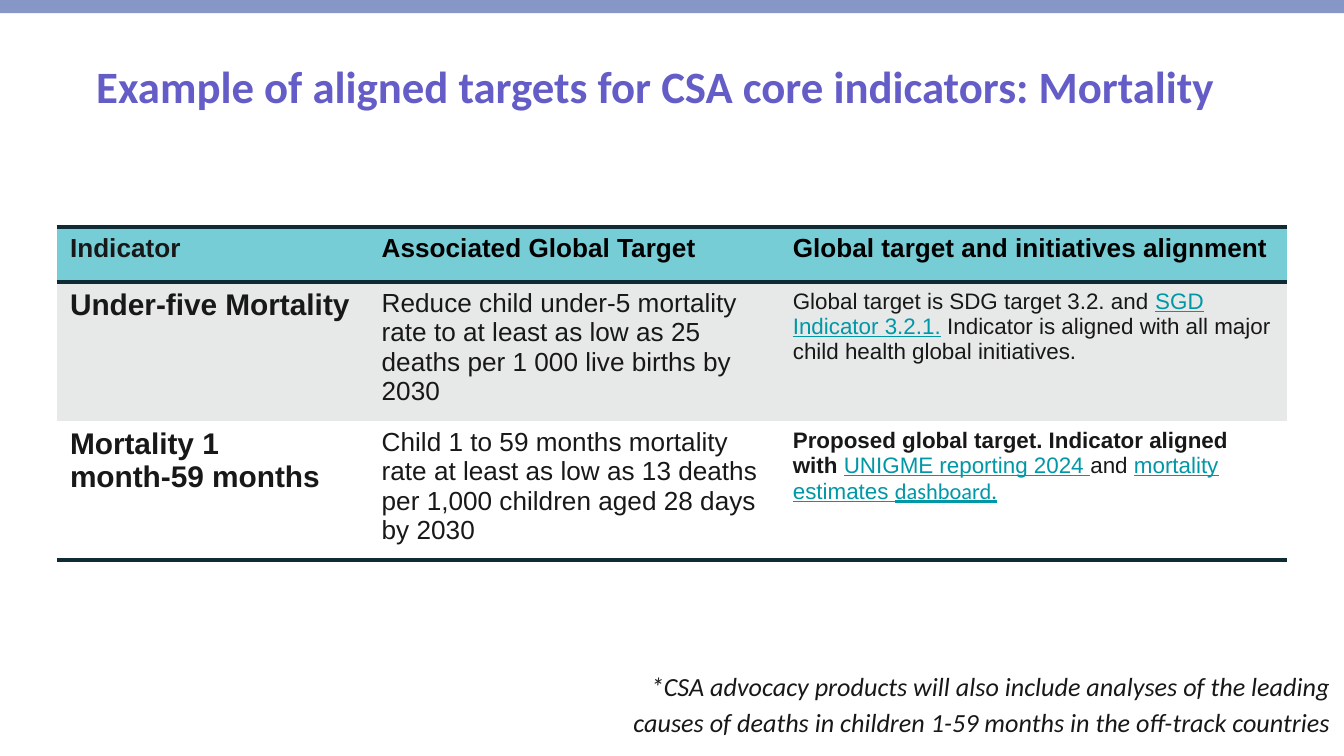
from lxml import etree
from pptx import Presentation, util as u
from pptx.dml import color
from pptx.enum import shapes, text
from pptx.oxml import ns

INK, BLACK, LINK, RULE = "181818", "000000", "0097A7", "0F2B36"
HEADER, GREY, WHITE = "76CDD6", "E7E8E8", "FFFFFF"


def rgb(value):
    return color.RGBColor.from_string(value)


def add_text(paragraph, content, size=14, font="Arial", ink=INK, bold=False, italic=False, underline=False):
    run = paragraph.add_run()
    run.text = content
    run.font.size, run.font.name = u.Pt(size), font
    run.font.bold, run.font.italic, run.font.underline = bold, italic, underline
    run.font.color.rgb = rgb(ink)


class SlideBuilder:
    """Holds the style and the current slide, with a method for each kind of element."""

    def __init__(self, slide):
        self.slide = slide

    def bar(self, left, top, width, height, fill):
        shape = self.slide.shapes.add_shape(
            shapes.MSO_SHAPE.RECTANGLE, u.Cm(left), u.Cm(top), u.Cm(width), u.Cm(height))
        shape.shadow.inherit = False
        shape.fill.solid()
        shape.fill.fore_color.rgb = rgb(fill)
        shape.line.fill.background()

    def text_box(self, left, top, width, height, content, align, anchor, spacing=1.0, **style):
        shape = self.slide.shapes.add_textbox(u.Cm(left), u.Cm(top), u.Cm(width), u.Cm(height))
        frame = shape.text_frame
        frame.word_wrap, frame.vertical_anchor = True, anchor
        paragraph = frame.paragraphs[0]
        paragraph.alignment, paragraph.line_spacing = align, spacing
        add_text(paragraph, content, **style)

    def table(self, left, top, columns, heights, fills, rows):
        table = self.slide.shapes.add_table(
            len(heights), len(columns), u.Cm(left), u.Cm(top), u.Cm(sum(columns)), u.Cm(sum(heights))).table
        for column, width in zip(table.columns, columns):
            column.width = u.Cm(width)
        for index, (height, fill, contents) in enumerate(zip(heights, fills, rows)):
            table.rows[index].height = u.Cm(height)
            ruled = {"lnT": index < 2, "lnB": index in (0, len(rows) - 1)}
            for cell, runs in zip(table.rows[index].cells, contents):
                for content, style in runs:
                    add_text(cell.text_frame.paragraphs[0], content, **style)
                self.borders(cell, ruled)
                cell.fill.solid()
                cell.fill.fore_color.rgb = rgb(fill)

    def borders(self, cell, ruled):
        properties = cell._tc.get_or_add_tcPr()
        for side in ("lnL", "lnR", "lnT", "lnB"):
            line = etree.SubElement(properties, ns.qn(f"a:{side}"), w=str(u.Pt(2)))
            if ruled.get(side):
                fill = etree.SubElement(line, ns.qn("a:solidFill"))
                etree.SubElement(fill, ns.qn("a:srgbClr"), val=RULE)
            else:
                etree.SubElement(line, ns.qn("a:noFill"))


def main():
    presentation = Presentation()
    presentation.slide_width, presentation.slide_height = u.Cm(25.4), u.Cm(14.29)
    builder = SlideBuilder(presentation.slides.add_slide(presentation.slide_layouts[6]))
    builder.bar(0, 0, 25.4, 0.25, "8696C7")
    builder.text_box(
        1.57, 0.81, 22.25, 1.6, "Example of aligned targets for CSA core indicators: Mortality",
        text.PP_ALIGN.LEFT, text.MSO_ANCHOR.MIDDLE, size=24, font="Calibri", ink="645DC7", bold=True)

    name = {"size": 16, "bold": True}
    note = {"size": 12}
    link = {"size": 12, "ink": LINK, "underline": True}
    heading = {"ink": BLACK, "bold": True}
    rows = [
        [[("Indicator", {"bold": True})],
         [("Associated Global Target", heading)],
         [("Global target and initiatives alignment", heading)]],
        [[("Under-five Mortality", name)],
         [("Reduce child under-5 mortality rate to at least as low as 25 deaths per 1 000 live births by 2030", {})],
         [("Global target is SDG target 3.2. and ", note),
          ("SGD Indicator 3.2.1.", link),
          (" Indicator is aligned with all major child health global initiatives.", note)]],
        [[("Mortality 1 month-59 months", name)],
         [("Child 1 to 59 months mortality rate at least as low as 13 deaths per 1,000 children "
           "aged 28 days by 2030", {})],
         [("Proposed global target. Indicator aligned with ", {**note, "bold": True}),
          ("UNIGME reporting 2024 ", link),
          ("and ", note),
          ("mortality estimates ", link),
          ("dashboard.", {**link, "font": "Calibri"})]],
    ]
    builder.table(1.07, 4.29, [5.89, 7.77, 9.6], [1.04, 2.47, 2.47], [HEADER, GREY, WHITE], rows)
    builder.text_box(
        10.62, 12.45, 14.78, 1.6,
        "*CSA advocacy products will also include analyses of the leading causes of deaths "
        "in children 1-59 months in the off-track countries",
        text.PP_ALIGN.RIGHT, text.MSO_ANCHOR.TOP, spacing=1.15, font="Calibri", italic=True)
    presentation.save("out.pptx")


if __name__ == "__main__":
    main()
